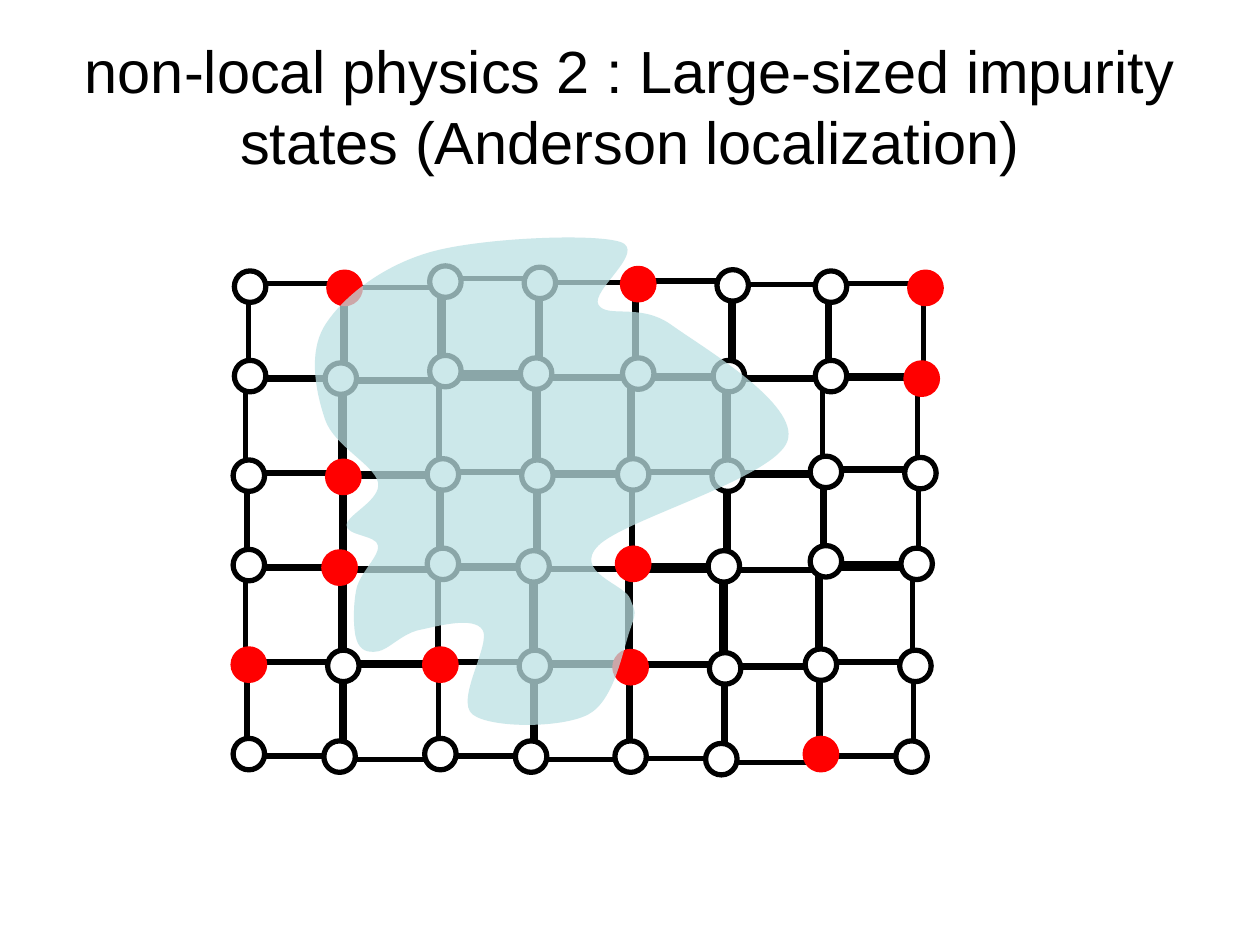
from dataclasses import dataclass

from lxml.etree import SubElement
from pptx import Presentation
from pptx.dml.color import RGBColor as Rgb
from pptx.enum.shapes import MSO_SHAPE as Kind
from pptx.enum.text import MSO_ANCHOR as Anchor, MSO_AUTO_SIZE as Fit, PP_ALIGN as Align
from pptx.oxml.ns import qn
from pptx.util import Inches, Pt


@dataclass(frozen=True)
class Theme:
    font: str = "Arial"
    size: int = 34
    width: int = 3
    black: Rgb = Rgb(0, 0, 0)
    white: Rgb = Rgb(255, 255, 255)
    red: Rgb = Rgb(255, 0, 0)
    cloud: Rgb = Rgb(0xBB, 0xE0, 0xE3)
    alpha: int = 74


CELL, DOT = 0.75, 0.25
UPPER = [(0, 0), (0.78, 0)]
LOWER = [(0.01, 0.74), (0.78, 0.77)]
DOTS = {"LL": (-0.1, 1.35), "UL": (-0.1, 0.64), "UR": (0.65, 0.65), "LR": (0.62, 1.37)}

BOTTOM = [(1.95, 4.51, ["UL"]), (3.47, 4.51, ["UL"]), (4.98, 4.53, ["UL"]), (6.49, 4.51, ["LL"])]
MIDDLE = [(1.95, 3.01, ["UR", "LR"]), (3.49, 3, []), (5, 3, ["LL"]), (6.53, 2.98, [])]
TOP = [(1.96, 1.51, ["UR"]), (3.51, 1.47, []), (5.04, 1.49, ["UL"]), (6.57, 1.51, ["UR", "LR"])]
BANDS = [(BOTTOM, UPPER + LOWER), (MIDDLE, UPPER + LOWER), (TOP, LOWER)]

KNOTS = [
    (3.83, 5), (3.33, 5), (3, 5.17), (2.83, 5.08), (2.83, 4.67),
    (3, 4.33), (2.75, 4.17), (3, 3.83), (2.58, 3.33), (2.58, 2.58),
    (3.42, 2), (4.92, 1.92), (4.75, 2.42), (5.33, 2.58), (6.25, 3.5),
    (4.75, 4.33), (5, 4.75), (5, 5), (4.67, 5.67), (3.75, 5.67),
]


def spline(knots):
    count = len(knots)
    points = []
    for i in range(count):
        four = [knots[(i + k) % count] for k in (-1, 0, 1, 2)]
        axes = list(zip(*four))
        points += [
            [b + (c - a) / 6 for a, b, c, d in axes],
            [c - (d - b) / 6 for a, b, c, d in axes],
            four[2],
        ]
    return points


class Board:
    def __init__(self, slide, theme):
        self.slide = slide
        self.theme = theme

    def title(self, text, x, y, w, h):
        box = self.slide.shapes.title
        box.left, box.top, box.width, box.height = map(Inches, (x, y, w, h))
        frame = box.text_frame
        frame.text = text
        frame.word_wrap = True
        frame.auto_size = Fit.NONE
        frame.vertical_anchor = Anchor.MIDDLE
        line = frame.paragraphs[0]
        line.alignment = Align.CENTER
        font = line.runs[0].font
        font.name = self.theme.font
        font.size = Pt(self.theme.size)
        font.color.rgb = self.theme.black

    def shape(self, kind, x, y, size, edge):
        item = self.slide.shapes.add_shape(kind, Inches(x), Inches(y), Inches(size), Inches(size))
        item.shadow.inherit = False
        item.line.color.rgb = edge
        item.line.width = Pt(self.theme.width)
        return item

    def cell(self, x, y):
        self.shape(Kind.RECTANGLE, x, y, CELL, self.theme.black).fill.background()

    def dot(self, x, y, impure):
        edge = self.theme.red if impure else self.theme.black
        item = self.shape(Kind.OVAL, x, y, DOT, edge)
        item.fill.solid()
        item.fill.fore_color.rgb = self.theme.red if impure else self.theme.white

    def block(self, x, y, cells, reds):
        for dx, dy in cells:
            self.cell(x + dx, y + dy)
        for name, (dx, dy) in DOTS.items():
            self.dot(x + dx, y + dy, name in reds)

    def cloud(self, knots):
        pen = self.slide.shapes.build_freeform(*map(Inches, knots[0]))
        pen.add_line_segments([tuple(map(Inches, point)) for point in spline(knots)], close=True)
        item = pen.convert_to_shape()
        item.shadow.inherit = False
        item.line.fill.background()
        item.fill.solid()
        item.fill.fore_color.rgb = self.theme.cloud
        self.curve(item)
        color = item._element.spPr.find(qn("a:solidFill"))[0]
        SubElement(color, qn("a:alpha")).set("val", str(self.theme.alpha * 1000))

    def curve(self, item):
        lines = list(item._element.iter(qn("a:lnTo")))
        trail = lines[0].getparent()
        for i in range(0, len(lines), 3):
            bend = SubElement(trail, qn("a:cubicBezTo"))
            lines[i].addprevious(bend)
            for line in lines[i:i + 3]:
                bend.append(line[0])
                trail.remove(line)


def main():
    deck = Presentation()
    deck.slide_width, deck.slide_height = Inches(10), Inches(7.5)
    board = Board(deck.slides.add_slide(deck.slide_layouts[5]), Theme())
    board.title(
        "non-local physics 2 : Large-sized impurity states (Anderson localization)",
        0, -0.58, 10, 2.83,
    )
    for band, cells in BANDS:
        for x, y, reds in band[:-1]:
            board.block(x, y, cells, reds)
        x, y, reds = band[-1]
        board.block(x, y, cells[::2], reds)
    board.cloud(KNOTS)
    deck.save("out.pptx")


if __name__ == "__main__":
    main()
